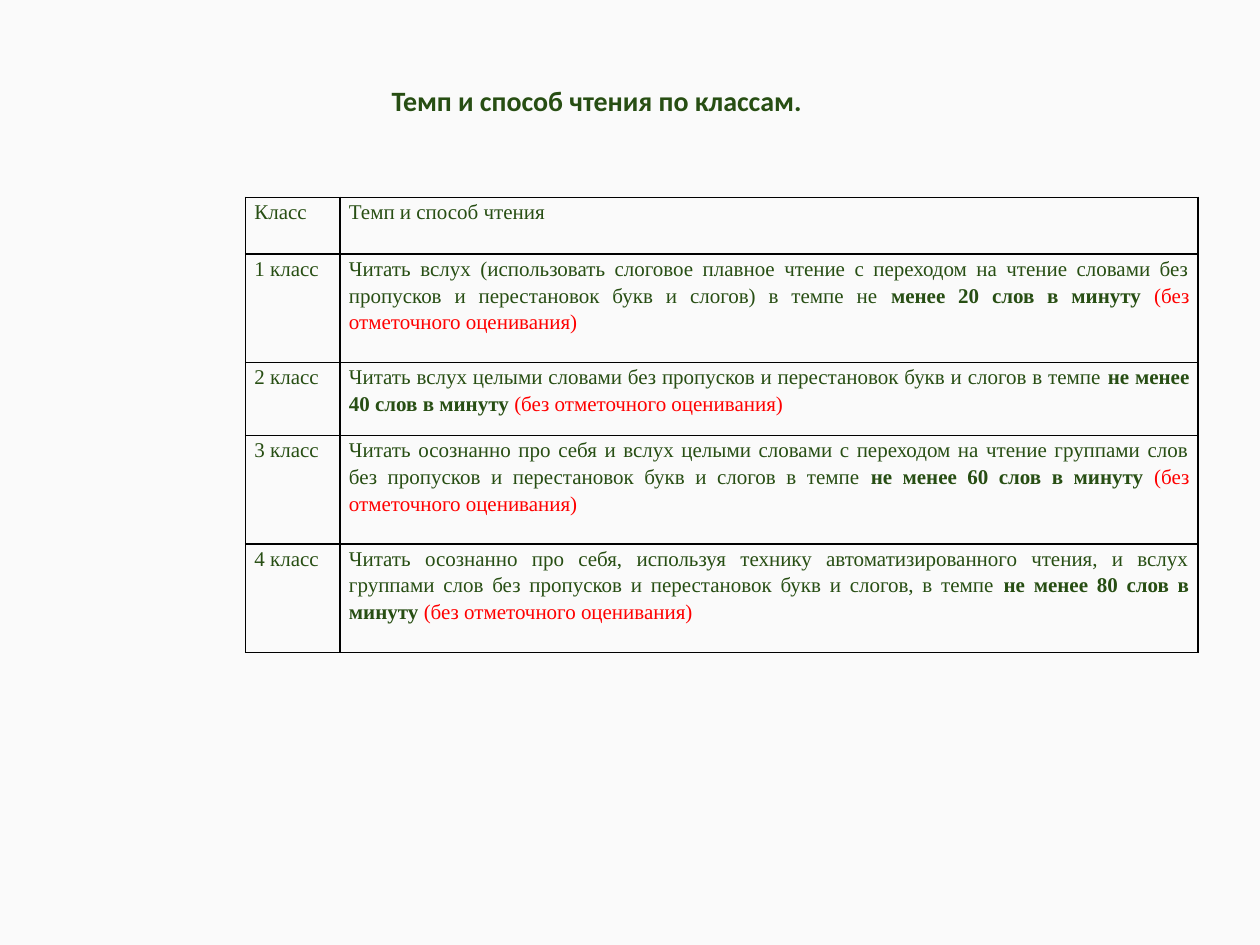
from lxml import etree
from pptx import Presentation
from pptx import util as u
from pptx.dml.color import RGBColor
from pptx.enum import text
from pptx.oxml import ns

WIDTH, HEIGHT = 10, 7.5
COLORS = {"page": "FAFAFA", "ink": "274E13", "note": "FF0000", "border": "000000"}
TITLE = "Темп и способ чтения по классам."
NOTE = "(без отметочного оценивания)"
HEADER = ("Класс", "Темп и способ чтения")
# class, how to read, required pace
GRADES = [
    ("1 класс", "Читать вслух (использовать слоговое плавное чтение с переходом на чтение словами "
     "без пропусков и перестановок букв и слогов) в темпе не ", "менее 20 слов в минуту "),
    ("2 класс", "Читать вслух целыми словами без пропусков и перестановок букв и слогов в темпе ",
     "не менее 40 слов в минуту "),
    ("3 класс", "Читать осознанно про себя и вслух целыми словами с переходом на чтение группами слов "
     "без пропусков и перестановок букв и слогов в темпе ", "не менее 60 слов в минуту "),
    ("4 класс", "Читать осознанно про себя, используя технику автоматизированного чтения, и вслух "
     "группами слов без пропусков и перестановок букв и слогов, в темпе ",
     "не менее 80 слов в минуту "),
]
COLUMN_WIDTHS = (0.75, 6.81)
ROW_HEIGHTS = (0.45, 0.86, 0.58, 0.86, 0.86)


def add_span(para, words, font="Times New Roman", size=12, color="ink", bold=False):
    span = para.add_run()
    span.text = words
    span.font.name = font
    span.font.size = u.Pt(size)
    span.font.bold = bold
    span.font.color.rgb = RGBColor.from_string(COLORS[color])


def add_borders(cell, width=1):
    properties = cell._tc.get_or_add_tcPr()
    for side in ("lnL", "lnR", "lnT", "lnB"):
        line = etree.SubElement(properties, ns.qn(f"a:{side}"), w=str(u.Pt(width)))
        fill = etree.SubElement(line, ns.qn("a:solidFill"))
        etree.SubElement(fill, ns.qn("a:srgbClr"), val=COLORS["border"])


def fill_cell(cell, spans):
    """Write (words, format) pairs as one justified paragraph in a bordered cell."""
    add_borders(cell)
    cell.fill.background()
    cell.margin_left = cell.margin_right = u.Inches(0.07)
    cell.margin_top = cell.margin_bottom = 0
    para = cell.text_frame.paragraphs[0]
    para.alignment = text.PP_ALIGN.JUSTIFY
    para.line_spacing = 1.15
    for words, style in spans:
        add_span(para, words, **style)


def add_title(page):
    left = 0.301 * WIDTH
    box = page.shapes.add_textbox(u.Inches(left), u.Inches(0.061 * HEIGHT),
                                  u.Inches(WIDTH - left), u.Inches(0.09 * HEIGHT))
    frame = box.text_frame
    frame.word_wrap = True
    frame.vertical_anchor = text.MSO_ANCHOR.MIDDLE
    add_span(frame.paragraphs[0], TITLE, font="Calibri", size=16, bold=True)


def add_grade_table(page):
    frame = page.shapes.add_table(
        len(ROW_HEIGHTS), len(COLUMN_WIDTHS),
        u.Inches(0.195 * WIDTH), u.Inches(0.209 * HEIGHT),
        u.Inches(sum(COLUMN_WIDTHS)), u.Inches(sum(ROW_HEIGHTS)))
    table = frame.table
    table.first_row = table.horz_banding = False
    for column, width in zip(table.columns, COLUMN_WIDTHS):
        column.width = u.Inches(width)
    for row, height in zip(table.rows, ROW_HEIGHTS):
        row.height = u.Inches(height)

    rows = [[[(words, {})] for words in HEADER]]
    for grade, method, pace in GRADES:
        rows.append([[(grade, {})],
                     [(method, {}), (pace, {"bold": True}), (NOTE, {"color": "note"})]])
    for row, contents in zip(table.rows, rows):
        for cell, spans in zip(row.cells, contents):
            fill_cell(cell, spans)


def main():
    deck = Presentation()
    deck.slide_width, deck.slide_height = u.Inches(WIDTH), u.Inches(HEIGHT)
    page = deck.slides.add_slide(deck.slide_layouts[6])
    page.background.fill.solid()
    page.background.fill.fore_color.rgb = RGBColor.from_string(COLORS["page"])
    add_grade_table(page)
    add_title(page)
    deck.save("out.pptx")


if __name__ == "__main__":
    main()
